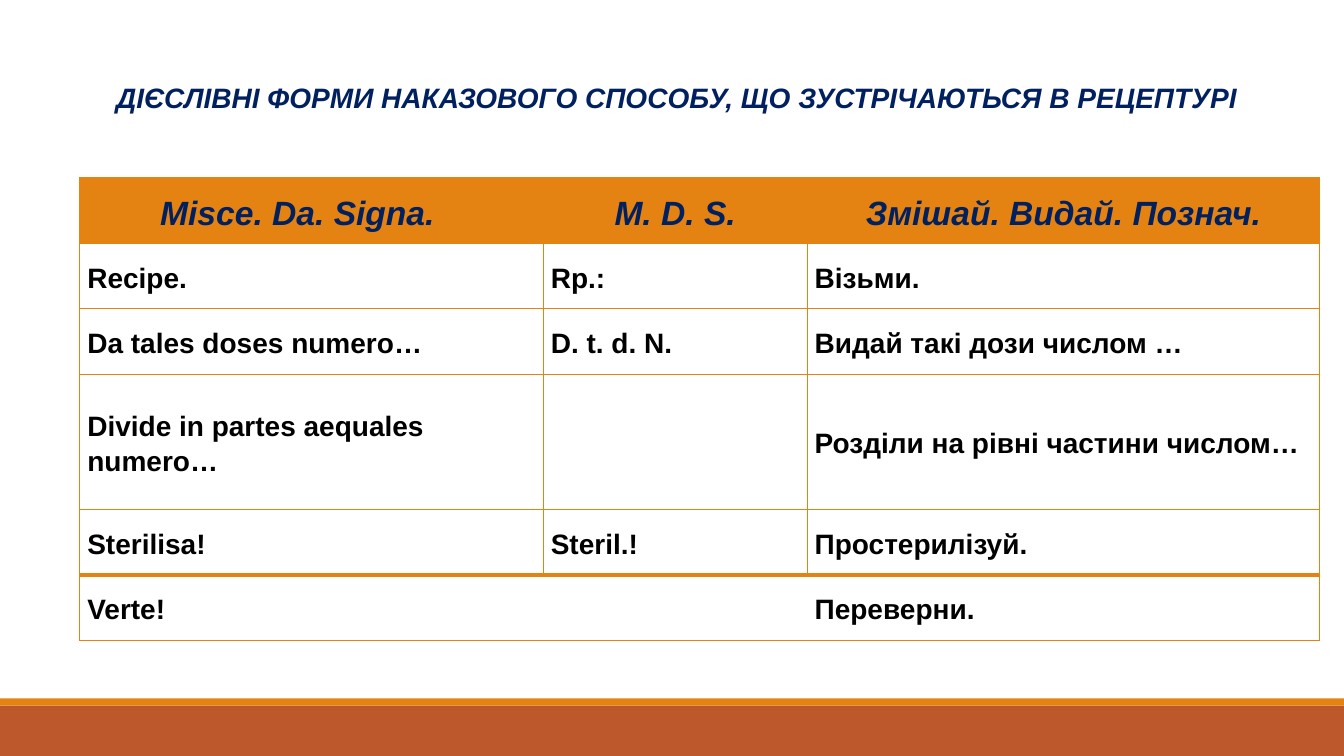
from lxml import etree
from pptx import Presentation
from pptx.dml.color import RGBColor
from pptx.enum import shapes, text
from pptx.oxml.ns import qn
from pptx.util import Cm, Pt

TITLE = "ДІЄСЛІВНІ ФОРМИ НАКАЗОВОГО СПОСОБУ, ЩО ЗУСТРІЧАЮТЬСЯ В РЕЦЕПТУРІ"
ROWS = [
    ("Misce. Da. Signa.", "M. D. S.", "Змішай. Видай. Познач."),
    ("Recipe.", "Rp.:", "Візьми."),
    ("Da tales doses numero…", "D. t. d. N.", "Видай такі дози числом …"),
    ("Divide in partes aequales numero…", "", "Розділи на рівні частини числом…"),
    ("Sterilisa!", "Steril.!", "Простерилізуй."),
    ("Verte!", "", "Переверни."),
]
COL_WIDTHS = [11.68, 6.65, 12.92]
ROW_HEIGHTS = [1.65, 1.65, 1.65, 3.41, 1.65, 1.65]
NAVY, BLACK, ORANGE, RUST = "002060", "000000", "E48312", "BD582C"
FOOTER_BARS = [(17.78, 1.27, RUST), (17.6, 0.18, ORANGE)]
WIDTH, HEIGHT = 33.87, 19.05


def rgb(value):
    return RGBColor.from_string(value)


def format_text(p, size, color, italic):
    for r in p.runs:
        f = r.font
        f.name, f.size, f.bold, f.italic = "Arial", Pt(size), True, italic
        f.color.rgb = rgb(color)


def add_border(cell, side, points):
    """Draw one cell edge (L, R, T or B); zero points hides it."""
    tc_pr = cell._tc.get_or_add_tcPr()
    ln = etree.SubElement(tc_pr, qn(f"a:ln{side}"), w=str(Pt(points)))
    if points:
        fill = etree.SubElement(ln, qn("a:solidFill"))
        etree.SubElement(fill, qn("a:srgbClr"), val=ORANGE)
    else:
        etree.SubElement(ln, qn("a:noFill"))


def fill_cell(cell, row, col, value):
    header, last = row == 0, row == len(ROWS) - 1
    last_col = len(COL_WIDTHS) - 1
    cell.margin_left = cell.margin_right = Cm(0.19)
    cell.margin_top = cell.margin_bottom = 0
    cell.vertical_anchor = text.MSO_ANCHOR.MIDDLE
    cell.text = value
    p = cell.text_frame.paragraphs[0]
    p.line_spacing = 1.15
    p.alignment = text.PP_ALIGN.CENTER if header else text.PP_ALIGN.LEFT
    format_text(p, 24 if header else 20, NAVY if header else BLACK, header)
    if header and col == 0:
        cell.margin_right = Cm(0.9)

    add_border(cell, "L", 0 if last and col > 0 else 1)
    add_border(cell, "R", 0 if last and col < last_col else 1)
    add_border(cell, "T", 4 if last else 1)
    add_border(cell, "B", 4 if row == len(ROWS) - 2 else 1)
    if header:
        cell.fill.solid()
        cell.fill.fore_color.rgb = rgb(ORANGE)
    else:
        cell.fill.background()


def main():
    prs = Presentation()
    prs.slide_width, prs.slide_height = Cm(WIDTH), Cm(HEIGHT)
    s = prs.slides.add_slide(prs.slide_layouts[5])

    for top, height, color in FOOTER_BARS:
        sp = s.shapes.add_shape(shapes.MSO_SHAPE.RECTANGLE,
                                0, Cm(top), Cm(WIDTH), Cm(height))
        sp.shadow.inherit = False
        sp.fill.solid()
        sp.fill.fore_color.rgb = rgb(color)
        sp.line.fill.background()

    title = s.shapes.title
    title.left, title.top = Cm(2.67), Cm(1.9)
    title.width, title.height = Cm(29.8), Cm(1.11)
    tf = title.text_frame
    tf.text = TITLE
    tf.word_wrap = True
    tf.auto_size = text.MSO_AUTO_SIZE.NONE
    tf.vertical_anchor = text.MSO_ANCHOR.MIDDLE
    tf.paragraphs[0].alignment = text.PP_ALIGN.LEFT
    format_text(tf.paragraphs[0], 20, NAVY, True)

    table = s.shapes.add_table(len(ROWS), len(COL_WIDTHS), Cm(2.01), Cm(4.48),
                               Cm(sum(COL_WIDTHS)), Cm(sum(ROW_HEIGHTS))).table
    table.horz_banding = False
    for column, width in zip(table.columns, COL_WIDTHS):
        column.width = Cm(width)
    for row, height in zip(table.rows, ROW_HEIGHTS):
        row.height = Cm(height)
    for i, values in enumerate(ROWS):
        for j, value in enumerate(values):
            fill_cell(table.cell(i, j), i, j, value)

    prs.save("out.pptx")


if __name__ == "__main__":
    main()
